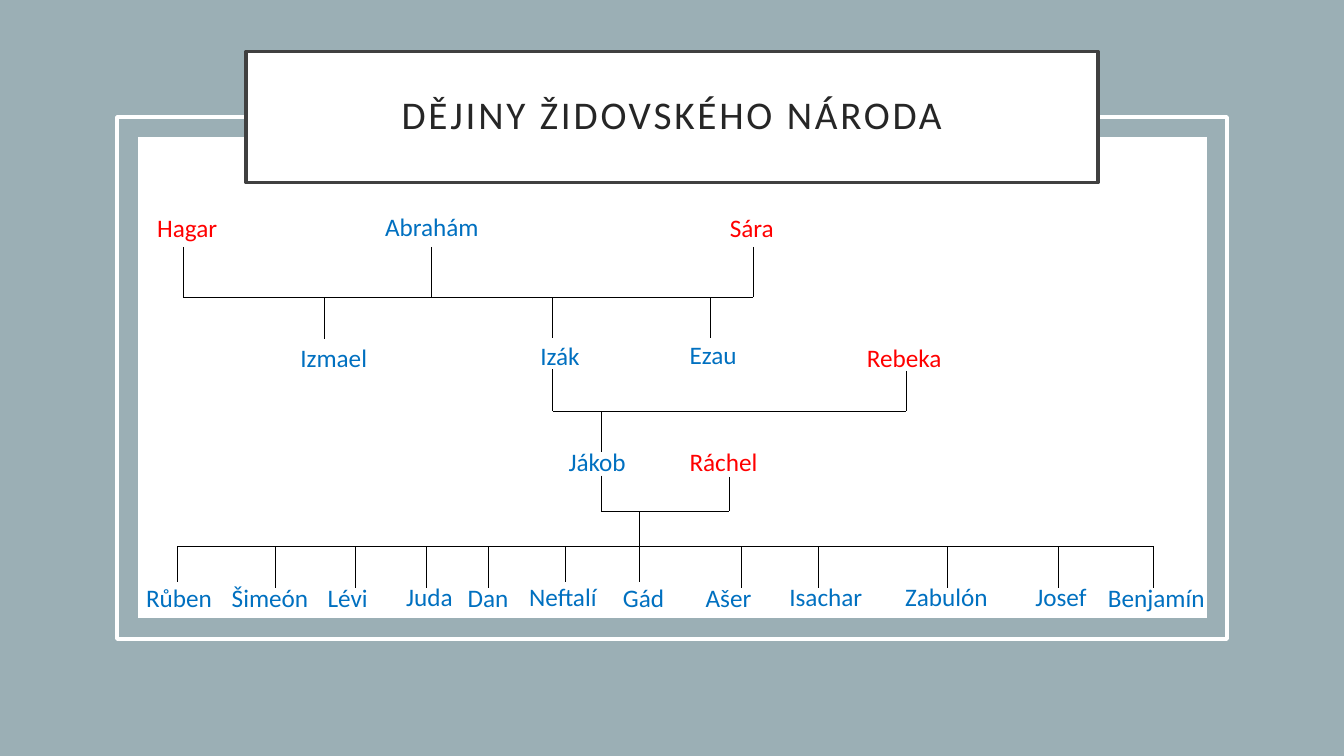
from lxml.etree import SubElement
from pptx import Presentation
from pptx.dml.color import RGBColor
from pptx.enum.shapes import MSO_CONNECTOR as Connector, MSO_SHAPE as Shape
from pptx.enum.text import MSO_ANCHOR as Anchor, MSO_AUTO_SIZE as AutoSize, PP_ALIGN as Align
from pptx.oxml.ns import qn
from pptx.util import Inches, Pt

COLORS = {
    "backdrop": "9BAFB5", "paper": "FFFFFF", "border": "404040", "title": "262626",
    "man": "0070C0", "woman": "FF0000", "line": "000000",
}
FONT = "Calibri"
TITLE = "DĚJINY ŽIDOVSKÉHO NÁRODA"

# name, left, top, box width
MEN = [
    ("Abrahám", 3.72, 2.05, 1.39),
    ("Izmael", 2.88, 3.35, 0.94),
    ("Izák", 5.26, 3.33, 1.08),
    ("Ezau", 6.74, 3.32, 1.08),
    ("Jákob", 5.54, 4.38, 1.08),
]
WOMEN = [
    ("Hagar", 1.46, 2.06, 1.08),
    ("Sára", 7.14, 2.06, 1.08),
    ("Rebeka", 8.5, 3.35, 1.08),
    ("Ráchel", 6.74, 4.38, 1.08),
]
# name, left, top, box width, x of the branch, lower end of the branch
SONS = [
    ("Růben", 1.35, 5.73, 1.08, 1.76, 5.77),
    ("Šimeón", 2.2, 5.73, 1.08, 2.73, 5.83),
    ("Lévi", 3.15, 5.73, 1.08, 3.52, 5.83),
    ("Juda", 3.93, 5.72, 1.08, 4.23, 5.83),
    ("Dan", 4.54, 5.73, 1.08, 4.84, 5.83),
    ("Neftalí", 5.15, 5.72, 1.08, 5.61, 5.77),
    ("Gád", 6.08, 5.73, 1.08, 6.34, 5.77),
    ("Ašer", 6.9, 5.73, 1.08, 7.35, 5.83),
    ("Isachar", 7.73, 5.72, 1.08, 8.12, 5.83),
    ("Zabulón", 8.88, 5.72, 1.16, 9.4, 5.83),
    ("Josef", 10.17, 5.72, 1.08, 10.5, 5.83),
    ("Benjamín", 10.89, 5.73, 1.24, 11.44, 5.83),
]
# height of the bar, parents as (x, upper end), children as (x, lower end)
FAMILIES = [
    (2.95, [(1.82, 2.45), (4.28, 2.45), (7.47, 2.45)],
     [(3.22, 3.36), (5.48, 3.35), (7.05, 3.35)]),
    (4.08, [(5.48, 3.66), (8.99, 3.68)], [(5.96, 4.48)]),
    (5.07, [(5.96, 4.72), (7.23, 4.73)], [(6.34, 5.42)]),
    (5.42, [], [son[4:] for son in SONS]),
]


def color(name):
    return RGBColor.from_string(COLORS[name])


def paint(shape, fill=None, line=None):
    if fill:
        shape.fill.solid()
        shape.fill.fore_color.rgb = color(fill)
    else:
        shape.fill.background()
    if line:
        shape.line.color.rgb = color(line)
        shape.line.width = Pt(2.5)
    else:
        shape.line.fill.background()


def add_panel(page, left, top, width, height, fill=None, line=None):
    panel = page.shapes.add_shape(
        Shape.RECTANGLE, Inches(left), Inches(top), Inches(width), Inches(height))
    panel.shadow.inherit = False
    paint(panel, fill, line)


def write(para, text, size, tone):
    span = para.add_run()
    span.text = text
    span.font.name = FONT
    span.font.size = Pt(size)
    span.font.color.rgb = color(tone)
    return span


def add_title(page):
    title = page.shapes.title
    title.left, title.top = Inches(2.44), Inches(0.51)
    title.width, title.height = Inches(8.45), Inches(1.3)
    paint(title, "paper", "border")
    frame = title.text_frame
    frame.word_wrap = True
    frame.auto_size = AutoSize.NONE
    frame.vertical_anchor = Anchor.MIDDLE
    frame.margin_left = frame.margin_right = Inches(0.2)
    frame.margin_top = frame.margin_bottom = Inches(0.2)
    para = frame.paragraphs[0]
    para.alignment = Align.CENTER
    para.line_spacing = 0.9
    span = write(para, TITLE, 28, "title")
    span.font._element.set("spc", "200")
    # Bring the title in front of the panels
    page.shapes._spTree.append(title._element)


def add_person(page, name, left, top, width, tone):
    box = page.shapes.add_textbox(Inches(left), Inches(top), Inches(width), Inches(0.4))
    box.text_frame.word_wrap = True
    box.text_frame.auto_size = AutoSize.SHAPE_TO_FIT_TEXT
    write(box.text_frame.paragraphs[0], name, 18, tone)


def add_line(page, x1, y1, x2, y2):
    line = page.shapes.add_connector(
        Connector.STRAIGHT, Inches(x1), Inches(y1), Inches(x2), Inches(y2))
    line.line.color.rgb = color("line")
    line.line.width = Pt(0.5)
    SubElement(line._element.spPr, qn("a:effectLst"))


def add_family(page, bar, parents, children):
    ends = parents + children
    xs = [x for x, _ in ends]
    add_line(page, min(xs), bar, max(xs), bar)
    for x, y in ends:
        add_line(page, x, min(y, bar), x, max(y, bar))


def main():
    deck = Presentation()
    deck.slide_width, deck.slide_height = Inches(13.33), Inches(7.5)
    page = deck.slides.add_slide(deck.slide_layouts[5])
    add_panel(page, 0, 0, 13.33, 7.5, fill="backdrop")
    add_panel(page, 1.37, 1.36, 10.6, 4.77, fill="paper")
    add_panel(page, 1.16, 1.16, 11.01, 5.18, line="paper")
    add_title(page)
    for person in MEN + [son[:4] for son in SONS]:
        add_person(page, *person, "man")
    for person in WOMEN:
        add_person(page, *person, "woman")
    for family in FAMILIES:
        add_family(page, *family)
    deck.save("out.pptx")


if __name__ == "__main__":
    main()
